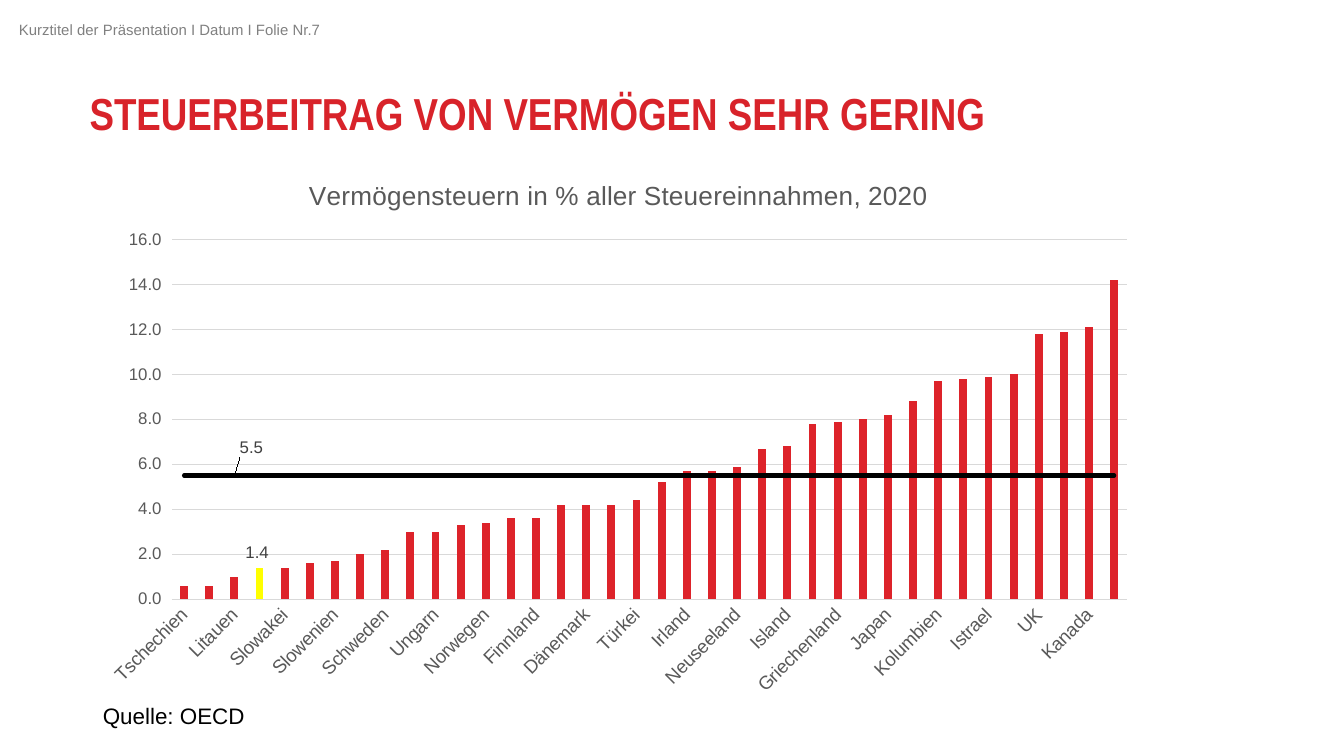
from dataclasses import dataclass
from typing import NamedTuple

from lxml import etree
from pptx import Presentation
from pptx import util as u
from pptx.chart import data as chart_data
from pptx.dml.color import RGBColor
from pptx.enum import chart as ce, text as te
from pptx.oxml import parse_xml
from pptx.oxml.ns import nsdecls, qn

PX = 9525  # EMU per px, 96 px to the inch


@dataclass(frozen=True)
class Theme:
    font: str = "Arial"
    heading_font: str = "Arial Narrow"
    red: str = "D8232A"
    bar: str = "DD232A"
    highlight: str = "FFFF00"
    black: str = "000000"
    header: str = "808080"
    muted: str = "595959"
    label: str = "404040"
    grid: str = "D9D9D9"
    header_size: float = 8
    value_size: float = 9
    category_size: float = 10
    source_size: float = 12
    chart_title_size: float = 14
    heading_size: float = 24


class Box(NamedTuple):
    left: int
    top: int
    width: int
    height: int

    def emu(self) -> list[int]:
        return [side * PX for side in self]


class Country(NamedTuple):
    name: str
    share: float


THEME = Theme()
PERCENT_FORMAT = r"#,##0.0_ ;\-#,##0.0\ "
AVERAGE = 5.5
HIGHLIGHTED, AVERAGE_LABELLED = 3, 2  # positions of the labelled points
COUNTRIES = [Country(*row) for row in (
    ("Tschechien", 0.6), ("Estland", 0.6), ("Litauen", 1.0), ("Österreich", 1.4),
    ("Slowakei", 1.4), ("Mexiko", 1.6), ("Slowenien", 1.7), ("Costa Rica", 2.0),
    ("Schweden", 2.2), ("Lettland", 3.0), ("Ungarn", 3.0), ("Deutschland", 3.3),
    ("Norwegen", 3.4), ("Polen", 3.6), ("Finnland", 3.6), ("Portugal", 4.2),
    ("Dänemark", 4.2), ("Niederlande", 4.2), ("Türkei", 4.4), ("Chile", 5.2),
    ("Irland", 5.7), ("Italien", 5.7), ("Neuseeland", 5.9), ("Spanien", 6.7),
    ("Island", 6.8), ("Schweiz", 7.8), ("Griechenland", 7.9), ("Belgien", 8.0),
    ("Japan", 8.2), ("Frankreich", 8.8), ("Kolumbien", 9.7), ("Australien", 9.8),
    ("Istrael", 9.9), ("Luxemburg", 10.0), ("UK", 11.8), ("USA", 11.9),
    ("Kanada", 12.1), ("Korea", 14.2),
)]


def style_font(font, size: float, color: str, name: str = THEME.font, bold: bool = False) -> None:
    font.size, font.name, font.bold = u.Pt(size), name, bold
    font.color.rgb = RGBColor.from_string(color)


def style_line(line, color: str, width: float) -> None:
    line.color.rgb = RGBColor.from_string(color)
    line.width = u.Pt(width)


def fill(fmt, color: str) -> None:
    fmt.fill.solid()
    fmt.fill.fore_color.rgb = RGBColor.from_string(color)


def add_text(slide, box: Box, text: str, *, size: float, color: str, font: str = THEME.font,
             bold: bool = False, inset: bool = True, spacing: float = 1.0) -> None:
    frame = slide.shapes.add_textbox(*box.emu()).text_frame
    frame.word_wrap = True
    if not inset:
        frame.margin_left = frame.margin_right = frame.margin_top = frame.margin_bottom = 0
        frame.vertical_anchor = te.MSO_ANCHOR.MIDDLE
    paragraph = frame.paragraphs[0]
    paragraph.line_spacing = spacing
    run = paragraph.add_run()
    run.text = text
    style_font(run.font, size, color, font, bold)


def move_to_line_plot(chart) -> None:
    """Turn the second column series into a line on the same axes."""
    bars = chart.plots[0]._element
    average = bars.findall(qn("c:ser"))[1]
    bars.remove(average)
    for invert in average.findall(qn("c:invertIfNegative")):
        average.remove(invert)
    line_plot = parse_xml(f'<c:lineChart {nsdecls("c")}><c:grouping val="standard"/>'
                          '<c:varyColors val="0"/></c:lineChart>')
    line_plot.append(average)
    etree.SubElement(line_plot, qn("c:marker")).set("val", "1")
    for axis in bars.findall(qn("c:axId")):
        etree.SubElement(line_plot, qn("c:axId")).set("val", axis.get("val"))
    bars.addnext(line_plot)


def label_point(series, index: int, position):
    series.data_labels.show_value = False
    label = series.points[index].data_label
    style_font(label.font, THEME.value_size, THEME.label)
    label.position = position
    return label


def raise_label(series, offset: float) -> None:
    label = series._element.find(f'{qn("c:dLbls")}/{qn("c:dLbl")}')
    label.insert(1, parse_xml(f'<c:layout {nsdecls("c")}><c:manualLayout><c:x val="0"/>'
                              f'<c:y val="{-offset}"/></c:manualLayout></c:layout>'))


def style_axis(axis, size: float) -> None:
    axis.major_tick_mark = axis.minor_tick_mark = ce.XL_TICK_MARK.NONE
    style_font(axis.tick_labels.font, size, THEME.muted)


def add_tax_chart(slide, box: Box) -> None:
    figures = chart_data.CategoryChartData(number_format=PERCENT_FORMAT)
    figures.categories = [country.name for country in COUNTRIES]
    figures.add_series("Series 1", [country.share for country in COUNTRIES])
    figures.add_series("Series 2", [AVERAGE] * len(COUNTRIES))
    chart = slide.shapes.add_chart(ce.XL_CHART_TYPE.COLUMN_CLUSTERED, *box.emu(), figures).chart
    style_font(chart.font, THEME.category_size, THEME.black)
    chart.has_legend = False
    chart.has_title = True
    heading = chart.chart_title.text_frame.paragraphs[0].add_run()
    heading.text = "Vermögensteuern in % aller Steuereinnahmen, 2020"
    style_font(heading.font, THEME.chart_title_size, THEME.muted)

    # Plots
    move_to_line_plot(chart)
    columns, average_line = chart.plots
    columns.gap_width, columns.overlap = 219, -27
    columns.vary_by_categories = False

    # Columns with one highlighted country
    shares = columns.series[0]
    fill(shares.format, THEME.bar)
    fill(shares.points[HIGHLIGHTED].format, THEME.highlight)
    label_point(shares, HIGHLIGHTED, ce.XL_LABEL_POSITION.OUTSIDE_END)

    # Average line with a raised label
    average = average_line.series[0]
    average.smooth = False
    average.marker.style = ce.XL_MARKER_STYLE.NONE
    style_line(average.format.line, THEME.black, 2.25)
    average.format.line._ln.set("cap", "rnd")
    label_point(average, AVERAGE_LABELLED, ce.XL_LABEL_POSITION.RIGHT)
    raise_label(average, 0.05)

    # Axes
    countries, percent = chart.category_axis, chart.value_axis
    style_axis(countries, THEME.category_size)
    style_line(countries.format.line, THEME.grid, 0.75)
    countries._element.find(f'{qn("c:txPr")}/{qn("a:bodyPr")}').set("rot", "-2700000")
    skip = parse_xml(f'<c:tickLblSkip {nsdecls("c")} val="2"/>')
    countries._element.find(qn("c:noMultiLvlLbl")).addprevious(skip)
    style_axis(percent, THEME.value_size)
    percent.format.line.fill.background()
    style_line(percent.major_gridlines.format.line, THEME.grid, 0.75)
    percent.minimum_scale, percent.maximum_scale, percent.major_unit = 0, 16, 2
    percent.tick_labels.number_format = PERCENT_FORMAT
    percent.tick_labels.number_format_is_linked = False


def main() -> None:
    deck = Presentation()
    deck.slide_width, deck.slide_height = 960 * PX, 540 * PX
    slide = deck.slides.add_slide(deck.slide_layouts[6])

    # Header and heading
    add_text(slide, Box(4, 10, 468, 23), "Kurztitel der Präsentation I Datum I Folie Nr.7",
             size=THEME.header_size, color=THEME.header)
    add_text(slide, Box(64, 65, 831, 35), "STEUERBEITRAG VON VERMÖGEN SEHR GERING",
             size=THEME.heading_size, color=THEME.red, font=THEME.heading_font,
             bold=True, inset=False, spacing=0.9)

    # Chart and source
    add_tax_chart(slide, Box(64, 111, 756, 394))
    add_text(slide, Box(64, 497, 242, 29), "Quelle: OECD",
             size=THEME.source_size, color=THEME.black)
    deck.save("out.pptx")


if __name__ == "__main__":
    main()
